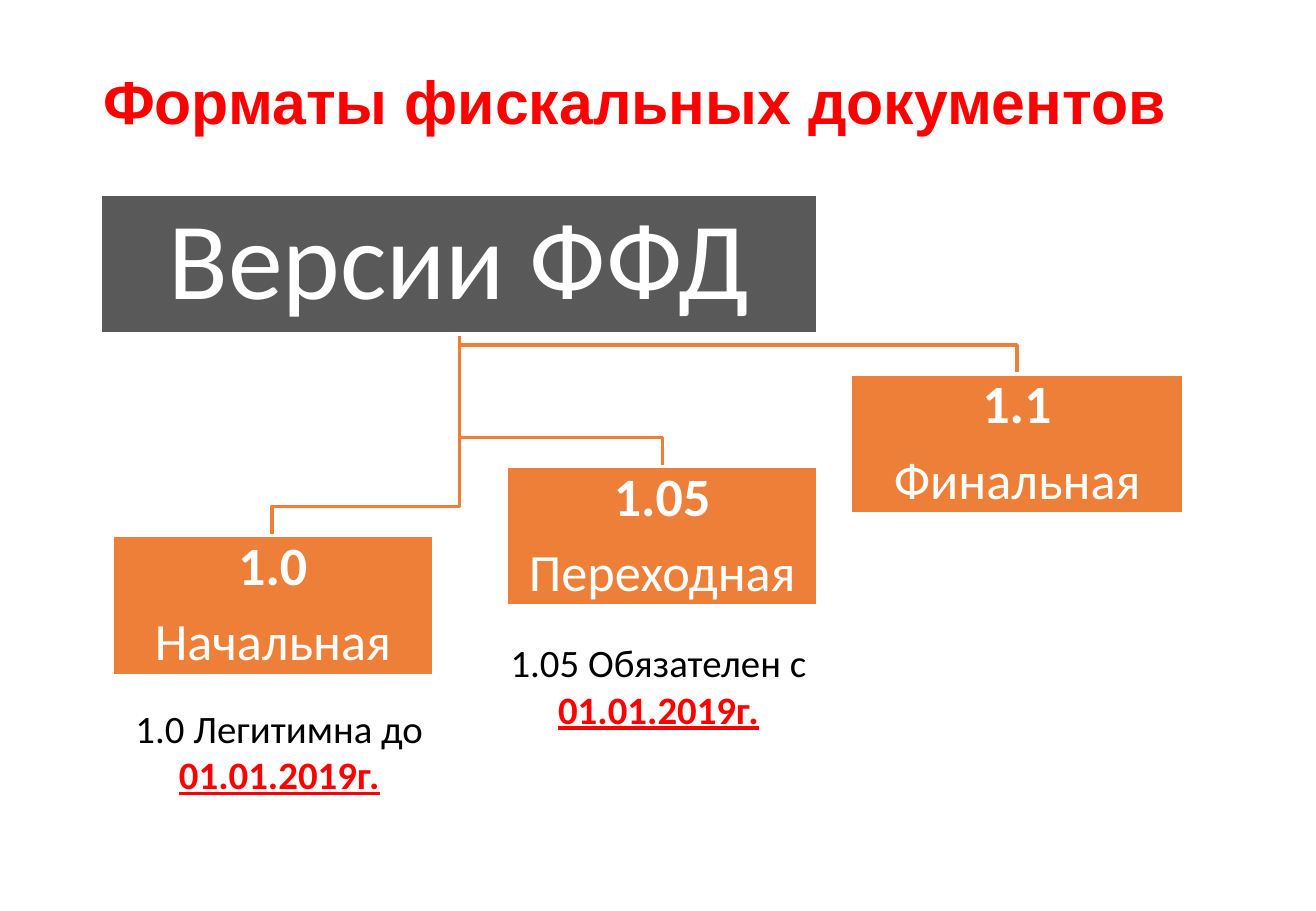
from dataclasses import dataclass

from pptx import Presentation, util as u
from pptx.dml.color import RGBColor
from pptx.enum import shapes, text

PX = 9144  # EMU per px, 100 px to the inch
RED = RGBColor(0xFF, 0x00, 0x00)
BLACK = RGBColor(0x00, 0x00, 0x00)
WHITE = RGBColor(0xFF, 0xFF, 0xFF)
GREY = RGBColor(0x59, 0x59, 0x59)
ORANGE = RGBColor(0xED, 0x7F, 0x39)
BOX_HEIGHT = 115
DROP = 24


@dataclass(frozen=True)
class Box:
    left: int
    top: int
    width: int

    @property
    def middle(self) -> int:
        return self.left + self.width // 2


@dataclass(frozen=True)
class Line:
    words: str
    size: int
    bold: bool = False


@dataclass(frozen=True)
class Version:
    box: Box
    number: str
    stage: str


@dataclass(frozen=True)
class Note:
    left: int
    top: int
    words: str
    date: str


ROOT = Box(83, 160, 590)
VERSIONS = [
    Version(Box(92, 441, 265), "1.0", "Начальная"),
    Version(Box(417, 384, 256), "1.05", "Переходная"),
    Version(Box(700, 308, 274), "1.1", "Финальная"),
]
NOTES = [
    Note(80, 575, "1.0 Легитимна до ", "01.01.2019г."),
    Note(392, 521, "1.05 Обязателен с ", "01.01.2019г."),
]


def add_title(page, words: str) -> None:
    box = page.shapes.add_textbox(75 * PX, 40 * PX, 934 * PX, 93 * PX)
    frame = box.text_frame
    frame.word_wrap = True
    frame.vertical_anchor = text.MSO_ANCHOR.MIDDLE
    para = frame.paragraphs[0]
    para.text = words
    para.line_spacing = 0.9
    para.font.name, para.font.size, para.font.bold = "Arial", u.Pt(36), True
    para.font.color.rgb = RED


def add_branch(page, child: Box) -> None:
    """Draw the stepped line from the root box down to a version box."""
    start, bend = ROOT.top + BOX_HEIGHT, child.top - DROP
    outline = page.shapes.build_freeform(ROOT.middle, start, scale=PX)
    outline.add_line_segments(
        [(ROOT.middle, bend), (child.middle, bend), (child.middle, child.top)],
        close=False,
    )
    branch = outline.convert_to_shape()
    branch.shadow.inherit = False
    branch.fill.background()
    branch.line.color.rgb = ORANGE
    branch.line.width = u.Pt(2)


def add_box(page, place: Box, fill: RGBColor, lines: list[Line], inset: int) -> None:
    box = page.shapes.add_shape(
        shapes.MSO_SHAPE.RECTANGLE,
        place.left * PX, place.top * PX, place.width * PX, BOX_HEIGHT * PX,
    )
    box.shadow.inherit = False
    box.fill.solid()
    box.fill.fore_color.rgb = fill
    box.line.color.rgb = WHITE
    box.line.width = u.Pt(2)
    frame = box.text_frame
    frame.word_wrap = True
    frame.vertical_anchor = text.MSO_ANCHOR.MIDDLE
    frame.margin_left = frame.margin_right = inset * PX
    frame.margin_top = frame.margin_bottom = inset * PX
    for index, line in enumerate(lines):
        para = frame.add_paragraph() if index else frame.paragraphs[0]
        para.text = line.words
        para.alignment = text.PP_ALIGN.CENTER
        para.line_spacing = 0.9
        if index:
            para.space_before = u.Pt(11)
        para.font.name, para.font.size = "Calibri", u.Pt(line.size)
        para.font.bold = line.bold
        para.font.color.rgb = WHITE


def add_note(page, note: Note) -> None:
    box = page.shapes.add_textbox(note.left * PX, note.top * PX, 300 * PX, 88 * PX)
    box.text_frame.word_wrap = True
    para = box.text_frame.paragraphs[0]
    para.alignment = text.PP_ALIGN.CENTER
    para.font.name, para.font.size = "Calibri", u.Pt(23)
    for words, color, strong in ((note.words, BLACK, False), (note.date, RED, True)):
        span = para.add_run()
        span.text = words
        span.font.color.rgb = color
        span.font.bold = span.font.underline = strong


def main() -> None:
    deck = Presentation()
    deck.slide_width, deck.slide_height = 1083 * PX, 750 * PX
    page = deck.slides.add_slide(deck.slide_layouts[6])
    add_title(page, "Форматы фискальных документов")
    for version in reversed(VERSIONS):
        add_branch(page, version.box)
    add_box(page, ROOT, GREY, [Line("Версии ФФД", 65)], 5)
    for version in VERSIONS:
        lines = [Line(version.number, 32, True), Line(version.stage, 31)]
        add_box(page, version.box, ORANGE, lines, 2)
    for note in NOTES:
        add_note(page, note)
    deck.save("out.pptx")


if __name__ == "__main__":
    main()
